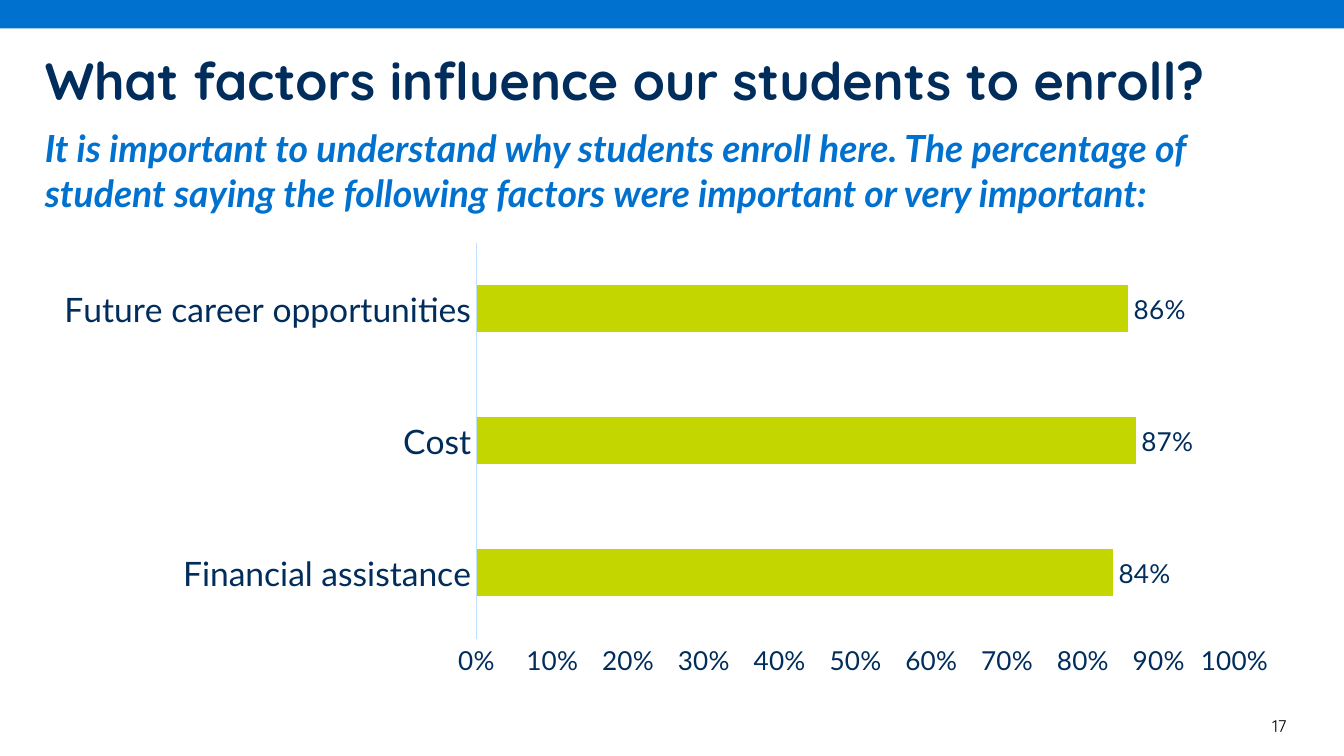
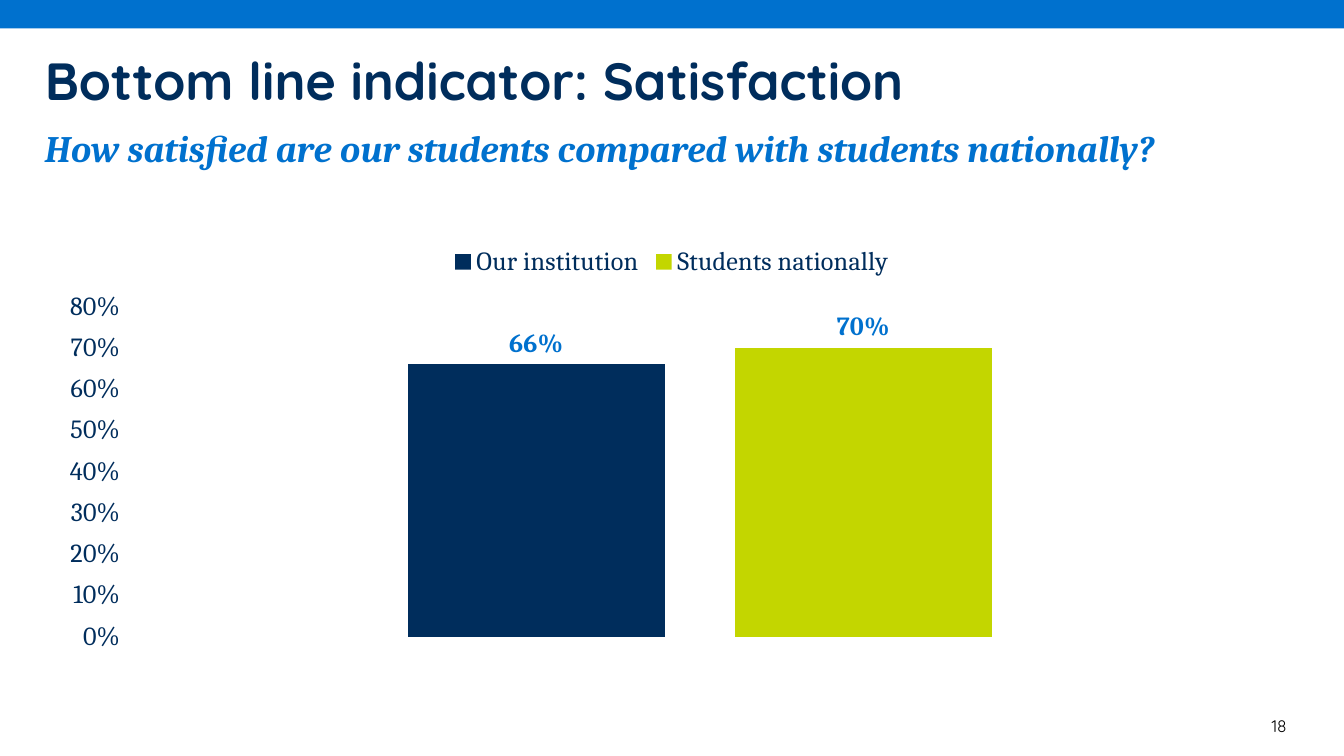
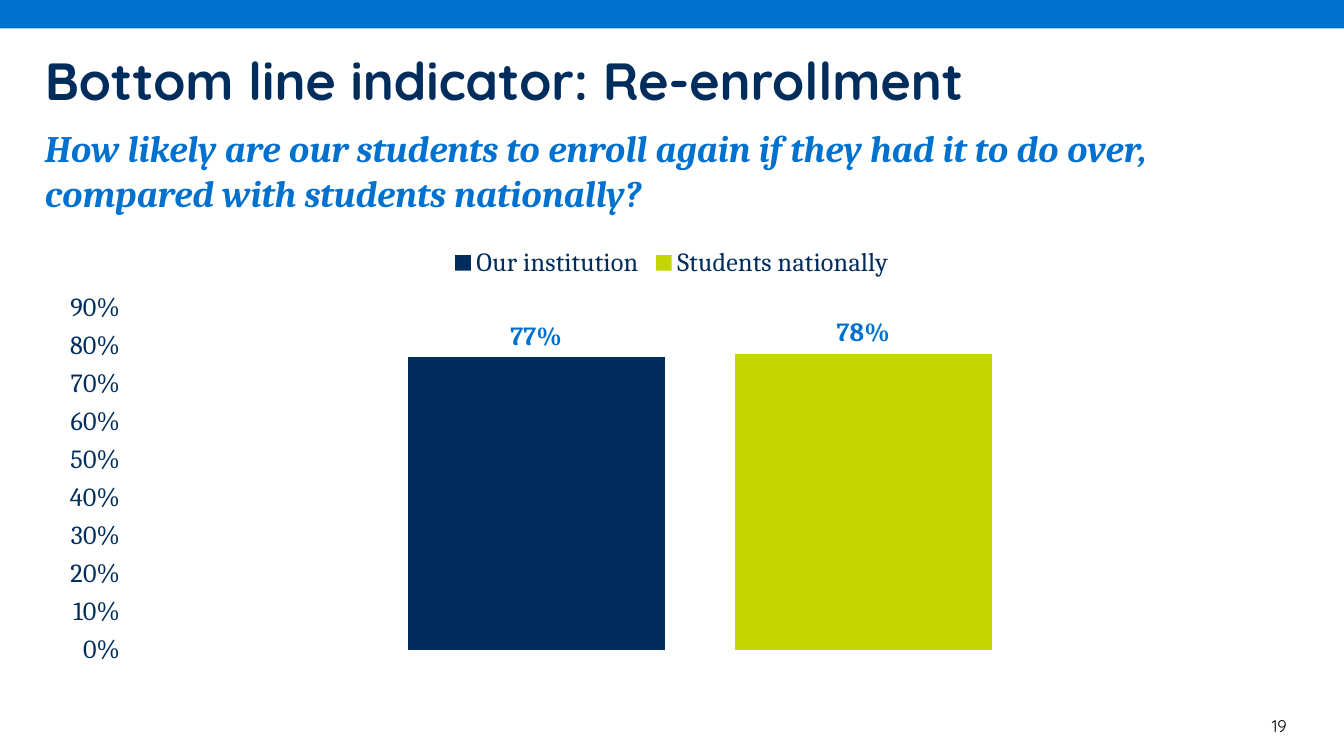
from pptx import Presentation
from pptx.chart.data import CategoryChartData
from pptx.dml.color import RGBColor
from pptx.enum import chart as ch, shapes, text
from pptx.util import Pt

NAVY = RGBColor(0x00, 0x2D, 0x5C)
BLUE = RGBColor(0x00, 0x71, 0xCE)
LIME = RGBColor(0xC3, 0xD6, 0x00)
PALE = RGBColor(0xC0, 0xDF, 0xFF)
BLACK = RGBColor(0, 0, 0)
HEADING, SANS, SERIF = "Quicksand", "Lato", "Cambria"
WIDTH, HEIGHT, MARGIN = 720, 405, 24
CONTENT = WIDTH - 2 * MARGIN
FIRST_NUMBER = 17


class Deck:
    def __init__(self):
        self.prs = Presentation()
        self.prs.slide_width, self.prs.slide_height = Pt(WIDTH), Pt(HEIGHT)
        self.slide = None

    def style(self, font, name, size, color, bold=False, italic=False):
        font.name, font.size = name, Pt(size)
        font.bold, font.italic = bold, italic
        font.color.rgb = color

    def set_words(self, frame, words, name, size, color, bold=False,
                  italic=False, align=text.PP_ALIGN.LEFT):
        frame.word_wrap = True
        frame.auto_size = text.MSO_AUTO_SIZE.NONE
        frame.vertical_anchor = text.MSO_ANCHOR.TOP
        frame.text = words
        paragraph = frame.paragraphs[0]
        paragraph.alignment = align
        self.style(paragraph.runs[0].font, name, size, color, bold, italic)

    def no_insets(self, frame):
        frame.margin_left = frame.margin_right = 0
        frame.margin_top = frame.margin_bottom = 0

    def start(self, title, question, question_font, question_height):
        self.slide = self.prs.slides.add_slide(self.prs.slide_layouts[5])
        self.band()
        self.title(title)
        self.question(question, question_font, question_height)
        self.number(FIRST_NUMBER + len(self.prs.slides) - 1)

    def band(self):
        band = self.slide.shapes.add_shape(
            shapes.MSO_SHAPE.RECTANGLE, 0, 0, Pt(WIDTH), Pt(15.3))
        band.shadow.inherit = False
        band.fill.solid()
        band.fill.fore_color.rgb = BLUE
        band.line.fill.background()

    def title(self, words):
        title = self.slide.shapes.title
        title.left, title.top = Pt(MARGIN), Pt(26)
        title.width, title.height = Pt(CONTENT), Pt(34)
        self.no_insets(title.text_frame)
        self.set_words(title.text_frame, words, HEADING, 28, NAVY, bold=True)

    def question(self, words, font, height):
        box = self.slide.shapes.add_textbox(
            Pt(MARGIN), Pt(67), Pt(CONTENT), Pt(height))
        self.no_insets(box.text_frame)
        self.set_words(box.text_frame, words, font, 20, BLUE,
                       bold=True, italic=True)

    def number(self, value):
        box = self.slide.shapes.add_textbox(Pt(657.4), Pt(380), Pt(39), Pt(18))
        self.set_words(box.text_frame, str(value), HEADING, 9, BLACK,
                       align=text.PP_ALIGN.RIGHT)

    def chart(self, kind, categories, series, left, top, height, font, gap,
              label_color, bold_labels=False):
        """Draw a chart; series holds (name, values, colour) rows."""
        data = CategoryChartData(number_format="0%")
        data.categories = categories
        for name, values, _ in series:
            data.add_series(name, values)
        chart = self.slide.shapes.add_chart(
            kind, Pt(left), Pt(top), Pt(CONTENT), Pt(height), data).chart
        chart.has_title = chart.has_legend = False
        self.style(chart.font, SERIF, 10, NAVY)

        # Value axis
        values_axis = chart.value_axis
        values_axis.has_major_gridlines = False
        values_axis.major_tick_mark = ch.XL_TICK_MARK.NONE
        values_axis.minimum_scale = 0
        values_axis.format.line.fill.background()
        values_axis.tick_labels.number_format = "0%"
        values_axis.tick_labels.number_format_is_linked = False
        self.style(values_axis.tick_labels.font, font, 14, NAVY)

        # Bars and their labels
        plot = chart.plots[0]
        plot.vary_by_categories = False
        plot.gap_width = gap
        for bars, (_, _, color) in zip(plot.series, series):
            bars.format.fill.solid()
            bars.format.fill.fore_color.rgb = color
            bars.invert_if_negative = False
            labels = bars.data_labels
            labels.show_value = True
            labels.number_format = "0%"
            labels.number_format_is_linked = False
            labels.position = ch.XL_LABEL_POSITION.OUTSIDE_END
            self.style(labels.font, font, 14, label_color, bold_labels)
        return chart

    def factors(self, categories, values):
        chart = self.chart(
            ch.XL_CHART_TYPE.BAR_CLUSTERED, categories,
            [("Series 1", values, LIME)], 21, 125.3, 242, SANS, 182, NAVY)
        factor_axis = chart.category_axis
        factor_axis.major_tick_mark = ch.XL_TICK_MARK.NONE
        factor_axis.format.line.color.rgb = PALE
        factor_axis.format.line.width = Pt(0.75)
        self.style(factor_axis.tick_labels.font, SANS, 18, NAVY)

    def comparison(self, ours, national, top, height):
        chart = self.chart(
            ch.XL_CHART_TYPE.COLUMN_CLUSTERED, ["1"],
            [("Our institution", [ours], NAVY),
             ("Students nationally", [national], LIME)],
            MARGIN, top, height, SERIF, 219, BLUE, bold_labels=True)
        chart.plots[0].overlap = -27
        chart.category_axis.visible = False
        chart.has_legend = True
        chart.legend.position = ch.XL_LEGEND_POSITION.TOP
        chart.legend.include_in_layout = False
        self.style(chart.legend.font, SERIF, 14, NAVY)


def main():
    deck = Deck()

    # Enrollment factors
    deck.start("What factors influence our students to enroll?",
               "It is important to understand why students enroll here. "
               "The percentage of student saying the following factors were "
               "important or very important:", SANS, 51)
    deck.factors(["Financial assistance", "Cost", "Future career opportunities"],
                 [0.84, 0.87, 0.86])

    # Satisfaction
    deck.start("Bottom line indicator: Satisfaction",
               "How satisfied are our students compared with students "
               "nationally?", SERIF, 60)
    deck.comparison(0.66, 0.70, top=124, height=230)

    # Re-enrollment
    deck.start("Bottom line indicator: Re-enrollment",
               "How likely are our students to enroll again if they had it to "
               "do over, compared with students nationally?", SERIF, 85)
    deck.comparison(0.77, 0.78, top=124.5, height=237)

    deck.prs.save("out.pptx")


if __name__ == "__main__":
    main()
